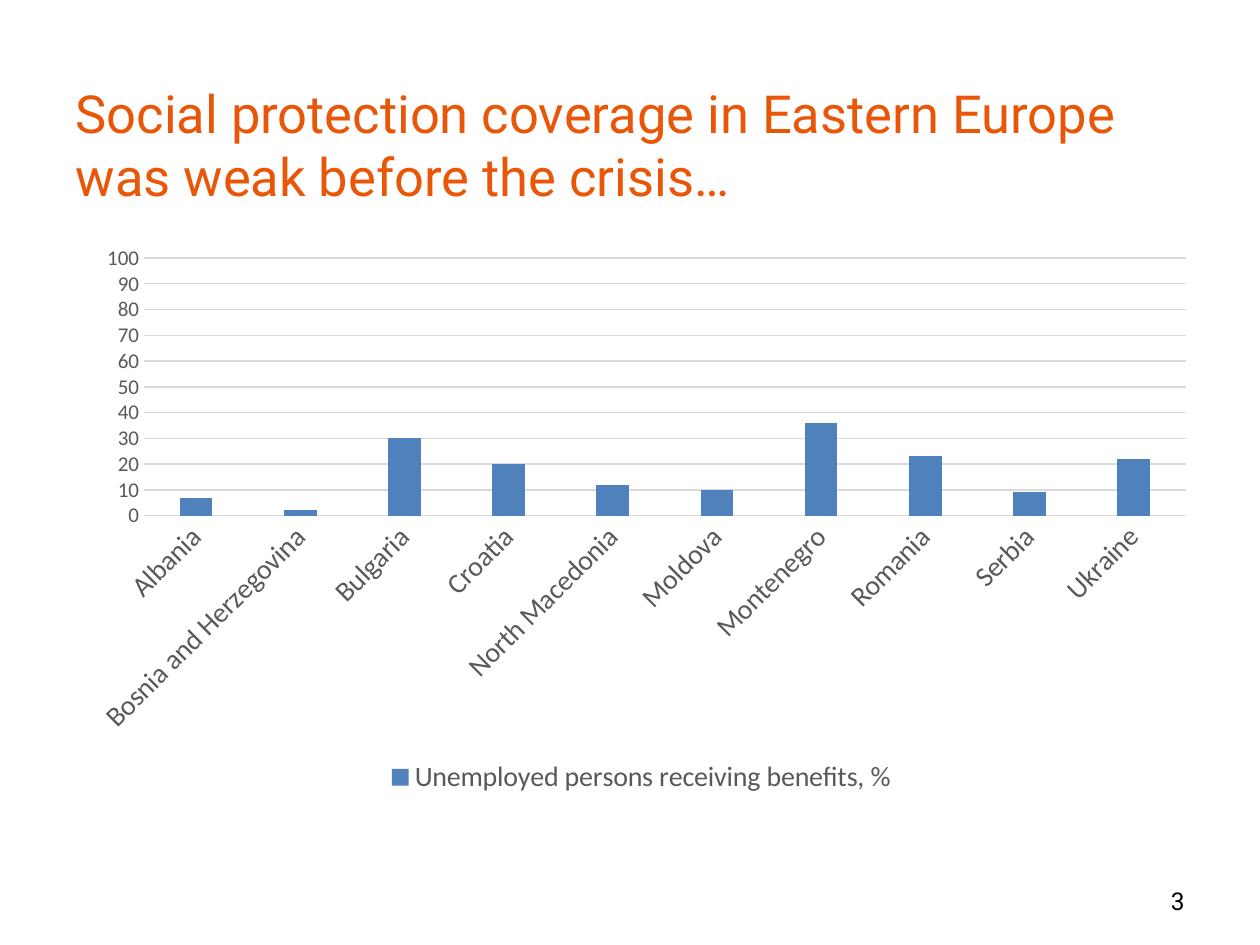
from pptx import Presentation
from pptx.chart.data import CategoryChartData
from pptx.dml.color import RGBColor
from pptx.enum.chart import XL_CHART_TYPE, XL_LEGEND_POSITION, XL_TICK_MARK
from pptx.enum.text import MSO_ANCHOR, PP_ALIGN
from pptx.oxml.ns import qn
from pptx.util import Inches, Pt

TITLE = "Social protection coverage in Eastern Europe was weak before the crisis…"
PAGE_NUMBER = "3"
SERIES_NAME = "Unemployed persons receiving benefits, %"
BENEFIT_COVERAGE = {
    "Albania": 7,
    "Bosnia and Herzegovina": 2,
    "Bulgaria": 30,
    "Croatia": 20,
    "North Macedonia": 12,
    "Moldova": 10,
    "Montenegro": 36,
    "Romania": 23,
    "Serbia": 9,
    "Ukraine": 22,
}

ORANGE = RGBColor(0xEA, 0x56, 0x08)
BLACK = RGBColor(0x00, 0x00, 0x00)
BLUE = RGBColor(0x4F, 0x81, 0xBD)
DARK_GRAY = RGBColor(0x59, 0x59, 0x59)
LIGHT_GRAY = RGBColor(0xD9, 0xD9, 0xD9)


def set_font(font, name, size, color):
    font.name = name
    font.size = Pt(size)
    font.bold = False
    font.color.rgb = color


def set_line(line):
    line.color.rgb = LIGHT_GRAY
    line.width = Pt(0.75)


def write_text(shape, text, size, color, alignment):
    frame = shape.text_frame
    frame.word_wrap = True
    frame.vertical_anchor = MSO_ANCHOR.MIDDLE
    paragraph = frame.paragraphs[0]
    paragraph.alignment = alignment
    run = paragraph.add_run()
    run.text = text
    set_font(run.font, "Roboto", size, color)


def add_coverage_chart(slide):
    data = CategoryChartData()
    data.categories = list(BENEFIT_COVERAGE)
    data.add_series(SERIES_NAME, list(BENEFIT_COVERAGE.values()))
    chart = slide.shapes.add_chart(
        XL_CHART_TYPE.COLUMN_CLUSTERED,
        Inches(0.59), Inches(1.86), Inches(9), Inches(4.49), data,
    ).chart
    set_font(chart.font, "Calibri", 10, BLACK)
    chart.has_title = False

    chart.has_legend = True
    chart.legend.position = XL_LEGEND_POSITION.BOTTOM
    chart.legend.include_in_layout = False
    set_font(chart.legend.font, "Calibri", 16, DARK_GRAY)

    plot = chart.plots[0]
    plot.gap_width = 219
    plot.overlap = -27
    plot.vary_by_categories = False
    fill = plot.series[0].format.fill
    fill.solid()
    fill.fore_color.rgb = BLUE

    for axis, size in ((chart.category_axis, 16), (chart.value_axis, 12)):
        axis.major_tick_mark = XL_TICK_MARK.NONE
        axis.minor_tick_mark = XL_TICK_MARK.NONE
        set_font(axis.tick_labels.font, "Calibri", size, DARK_GRAY)

    set_line(chart.category_axis.format.line)
    label_body = chart.category_axis._element.find(qn("c:txPr")).find(qn("a:bodyPr"))
    label_body.set("rot", "-2700000")  # 45 degrees, rising to the right

    value_axis = chart.value_axis
    value_axis.minimum_scale = 0
    value_axis.maximum_scale = 100
    value_axis.major_unit = 10
    value_axis.format.line.fill.background()
    value_axis.has_major_gridlines = True
    set_line(value_axis.major_gridlines.format.line)


def main():
    presentation = Presentation()
    presentation.slide_width = Inches(10)
    presentation.slide_height = Inches(7.5)
    slide = presentation.slides.add_slide(presentation.slide_layouts[5])

    title = slide.shapes.title
    title.left, title.top = Inches(0.5), Inches(0.59)
    title.width, title.height = Inches(9), Inches(1.11)
    write_text(title, TITLE, 30, ORANGE, PP_ALIGN.LEFT)

    number_box = slide.shapes.add_textbox(
        Inches(7.17), Inches(6.95), Inches(2.33), Inches(0.4))
    write_text(number_box, PAGE_NUMBER, 14, BLACK, PP_ALIGN.RIGHT)

    add_coverage_chart(slide)
    presentation.save("out.pptx")


if __name__ == "__main__":
    main()
